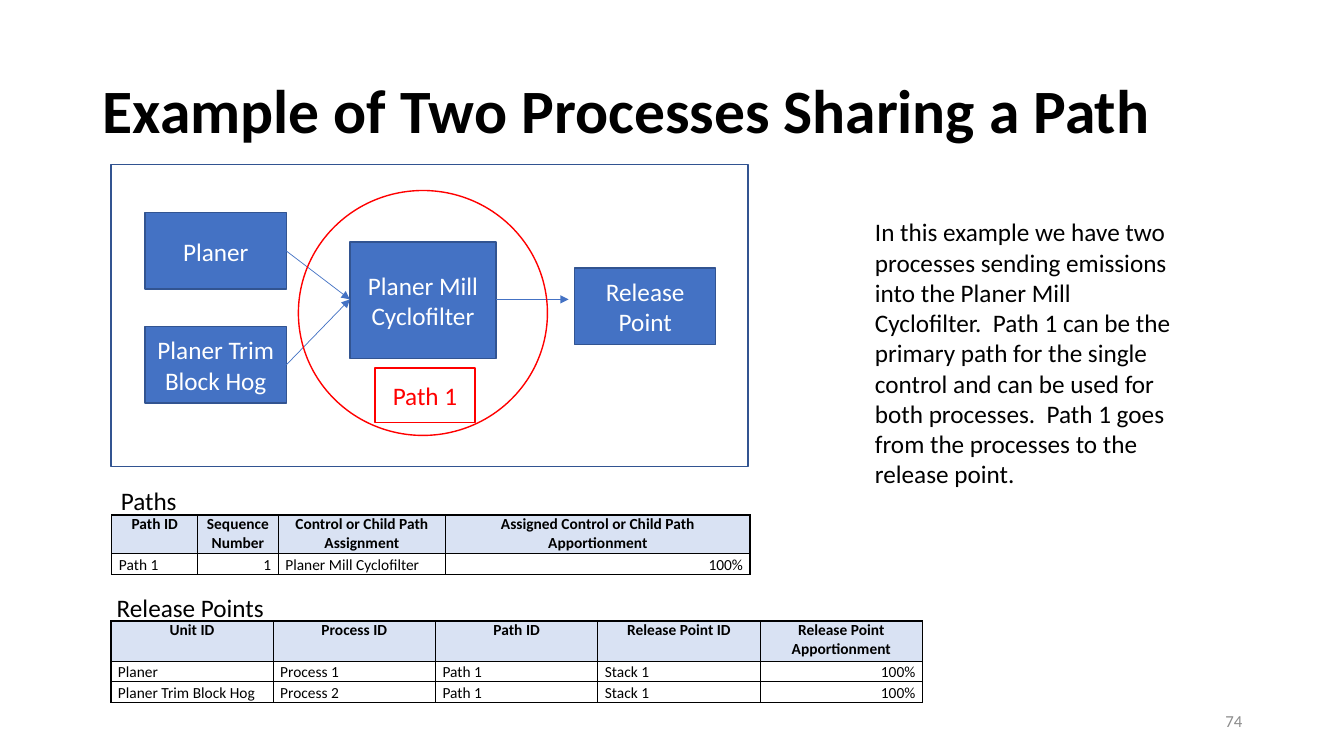
from lxml import etree
from pptx import Presentation
from pptx.dml.color import RGBColor
from pptx.enum.shapes import MSO_CONNECTOR, MSO_SHAPE
from pptx.enum.text import MSO_ANCHOR, PP_ALIGN
from pptx.oxml.ns import qn
from pptx.util import Emu, Pt

EMU_PER_PX = 9144  # 100 px to the inch
FONT = "Calibri"
BLACK = RGBColor(0x00, 0x00, 0x00)
WHITE = RGBColor(0xFF, 0xFF, 0xFF)
GRAY = RGBColor(0x8C, 0x8C, 0x8C)
BLUE = RGBColor(0x44, 0x72, 0xC4)
DARK_BLUE = RGBColor(0x32, 0x54, 0x91)
PALE_BLUE = RGBColor(0xD9, 0xE2, 0xF3)
RED = RGBColor(0xFF, 0x00, 0x00)

RECTANGLE, OVAL = MSO_SHAPE.RECTANGLE, MSO_SHAPE.OVAL
STRAIGHT = MSO_CONNECTOR.STRAIGHT
LEFT, CENTER, RIGHT = PP_ALIGN.LEFT, PP_ALIGN.CENTER, PP_ALIGN.RIGHT
TOP, MIDDLE, BOTTOM = MSO_ANCHOR.TOP, MSO_ANCHOR.MIDDLE, MSO_ANCHOR.BOTTOM


def px(*lengths):
    return [Emu(length * EMU_PER_PX) for length in lengths]


class SlideBuilder:
    def __init__(self, slide):
        self.slide = slide

    def fill_text(self, frame, text, size, color, align=LEFT, bold=False):
        frame.word_wrap = True
        paragraph = frame.paragraphs[0]
        paragraph.text = text
        paragraph.alignment = align
        font = paragraph.font
        font.name, font.size, font.bold = FONT, Pt(size), bold
        font.color.rgb = color
        return paragraph

    def text(self, box, text, size=18, color=BLACK, align=LEFT, anchor=TOP, bold=False):
        frame = self.slide.shapes.add_textbox(*px(*box)).text_frame
        frame.vertical_anchor = anchor
        return self.fill_text(frame, text, size, color, align, bold)

    def shape(self, kind, box, line, fill=None, text="", color=WHITE):
        shape = self.slide.shapes.add_shape(kind, *px(*box))
        shape.shadow.inherit = False
        shape.line.color.rgb = line
        shape.line.width = Pt(1)
        if fill is None:
            shape.fill.background()
        else:
            shape.fill.solid()
            shape.fill.fore_color.rgb = fill
        if text:
            shape.text_frame.vertical_anchor = MIDDLE
            self.fill_text(shape.text_frame, text, 18, color, CENTER)

    def arrow(self, start, end):
        connector = self.slide.shapes.add_connector(STRAIGHT, *px(*start, *end))
        connector.line.color.rgb = BLUE
        connector.line.width = Pt(0.5)
        line = connector.line._get_or_add_ln()
        etree.SubElement(line, qn("a:tailEnd"), type="triangle")
        etree.SubElement(connector._element.spPr, qn("a:effectLst"))

    def border(self, cell):
        properties = cell._tc.get_or_add_tcPr()
        for side in ("a:lnL", "a:lnR", "a:lnT", "a:lnB"):
            line = etree.SubElement(properties, qn(side), w=str(Pt(1)))
            fill = etree.SubElement(line, qn("a:solidFill"))
            etree.SubElement(fill, qn("a:srgbClr"), val=str(BLACK))

    def table(self, left, top, widths, heights, rows, right_columns):
        box = px(left, top, sum(widths), sum(heights))
        table = self.slide.shapes.add_table(len(rows), len(widths), *box).table
        table.horz_banding = False
        for column, width in zip(table.columns, px(*widths)):
            column.width = width
        for row, height in zip(table.rows, px(*heights)):
            row.height = height
        for i, values in enumerate(rows):
            header = i == 0
            for j, value in enumerate(values):
                cell = table.cell(i, j)
                cell.margin_left, cell.margin_right = px(7, 7)
                cell.margin_top = cell.margin_bottom = 0
                cell.vertical_anchor = TOP if header else BOTTOM
                self.border(cell)
                if header:
                    cell.fill.solid()
                    cell.fill.fore_color.rgb = PALE_BLUE
                    align = CENTER
                else:
                    cell.fill.background()
                    align = RIGHT if j in right_columns else LEFT
                self.fill_text(cell.text_frame, value, 11, BLACK, align, header)


def main():
    presentation = Presentation()
    presentation.slide_width, presentation.slide_height = px(1333, 750)
    slide = presentation.slides.add_slide(presentation.slide_layouts[6])
    builder = SlideBuilder(slide)

    # Page number and title
    builder.text((942, 695, 300, 40), "74", 12, GRAY, RIGHT, MIDDLE)
    title = builder.text((92, 40, 1150, 145), "Example of Two Processes Sharing a Path",
                         44, anchor=MIDDLE, bold=True)
    title.line_spacing = 0.9

    # Flow diagram
    builder.shape(RECTANGLE, (110, 163, 632, 300), DARK_BLUE)
    for box, label in (
        ((144, 211, 140, 76), "Planer"),
        ((144, 324, 140, 76), "Planer Trim Block Hog"),
        ((347, 240, 145, 116), "Planer Mill Cyclofilter"),
        ((570, 266, 140, 76), "Release Point"),
    ):
        builder.shape(RECTANGLE, box, DARK_BLUE, BLUE, label)
    for start, end in (
        ((284, 249), (347, 297)),
        ((284, 362), (347, 297)),
        ((492, 297), (564, 297)),
    ):
        builder.arrow(start, end)

    # Path highlight
    builder.shape(OVAL, (296, 189, 247, 243), RED)
    builder.shape(RECTANGLE, (372, 365, 99, 54), RED, text="Path 1", color=RED)

    # Explanation
    builder.text(
        (858, 210, 313, 313),
        "In this example we have two processes sending emissions into the Planer Mill "
        "Cyclofilter.  Path 1 can be the primary path for the single control and can be "
        "used for both processes.  Path 1 goes from the processes to the release point.",
    )

    # Paths table
    builder.table(111, 511, (85, 80, 166, 302), (38, 21), (
        ("Path ID", "Sequence Number", "Control or Child Path Assignment",
         "Assigned Control or Child Path Apportionment"),
        ("Path 1", "1", "Planer Mill Cyclofilter", "100%"),
    ), right_columns=(1, 3))
    builder.text((110, 477, 142, 40), "Paths")

    # Release points table
    builder.table(110, 616, (161,) * 5, (40, 20, 21), (
        ("Unit ID", "Process ID", "Path ID", "Release Point ID",
         "Release Point Apportionment"),
        ("Planer", "Process 1", "Path 1", "Stack 1", "100%"),
        ("Planer Trim Block Hog", "Process 2", "Path 1", "Stack 1", "100%"),
    ), right_columns=(4,))
    builder.text((106, 583, 213, 40), "Release Points")

    presentation.save("out.pptx")


if __name__ == "__main__":
    main()
